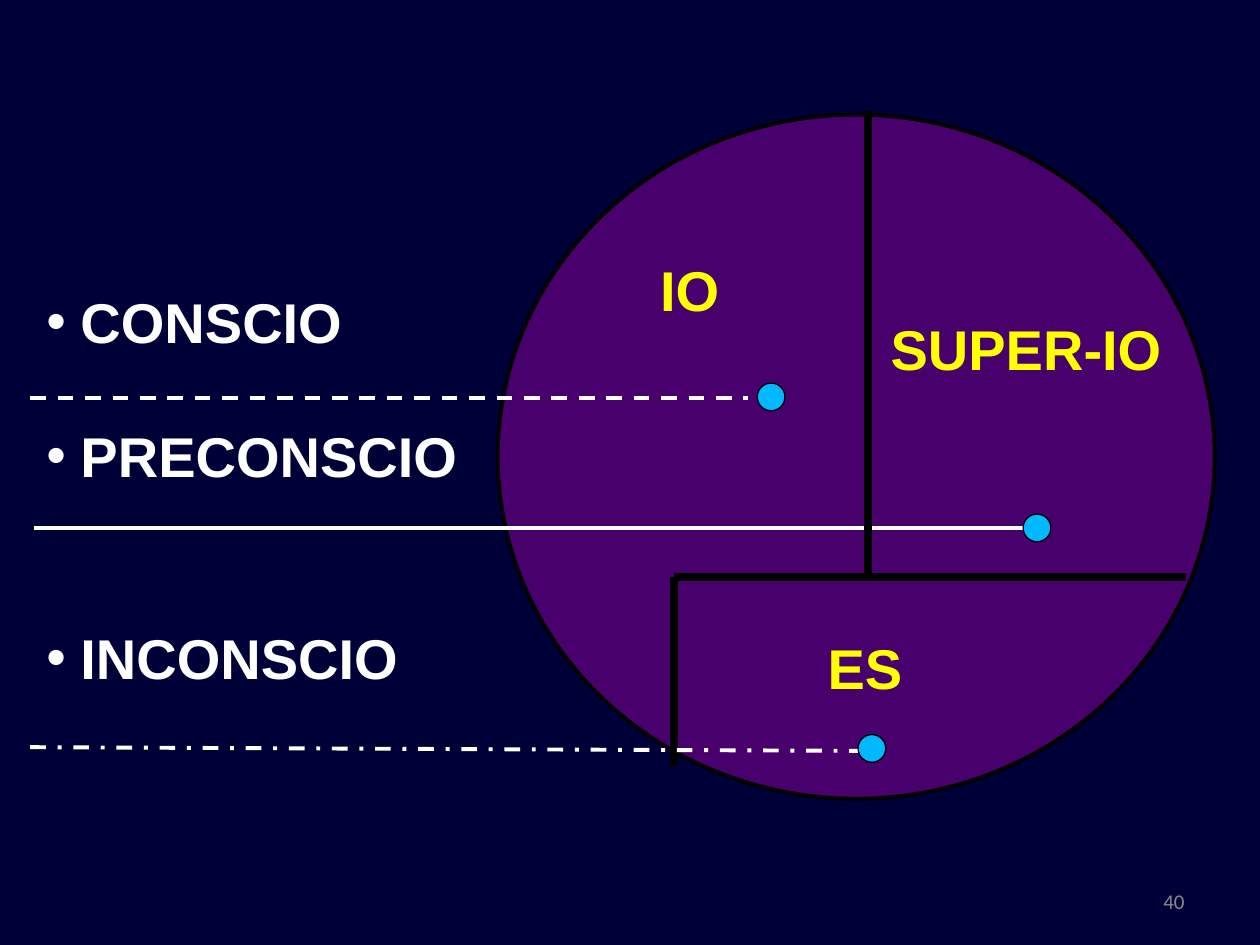
import dataclasses

import pptx
import pptx.dml.color
import pptx.enum.dml
import pptx.enum.shapes
import pptx.enum.text
import pptx.oxml.ns
import pptx.util
from lxml import etree

Inches = pptx.util.Inches
Pt = pptx.util.Pt
Shape = pptx.enum.shapes.MSO_SHAPE
Dash = pptx.enum.dml.MSO_LINE
Align = pptx.enum.text.PP_ALIGN
Anchor = pptx.enum.text.MSO_ANCHOR


@dataclasses.dataclass(frozen=True)
class Theme:
    background: str = "000039"
    level: str = "FFFFFF"
    label: str = "FFFF00"
    circle: str = "CC00CC"
    dot: str = "00B8FF"
    outline: str = "000000"
    number: str = "898989"
    font: str = "Arial"
    number_font: str = "Calibri"
    text_size: float = 32
    line_pitch: float = 38.4
    number_size: float = 12
    divider_width: float = 4.5
    pointer_width: float = 2.25
    dot_line_width: float = 0.75


def rgb(value):
    return pptx.dml.color.RGBColor.from_string(value)


def add_xml(parent, tag, **attributes):
    return etree.SubElement(parent, pptx.oxml.ns.qn(tag), **attributes)


class SlideBuilder:
    def __init__(self, slide, theme):
        self.slide = slide
        self.theme = theme
        fill = slide.background.fill
        fill.solid()
        fill.fore_color.rgb = rgb(theme.background)

    def text_box(self, left, top, width, height, wrap=True):
        shape = self.slide.shapes.add_textbox(
            Inches(left), Inches(top), Inches(width), Inches(height))
        shape.text_frame.word_wrap = wrap
        return shape.text_frame

    def style(self, paragraph, color):
        paragraph.line_spacing = Pt(self.theme.line_pitch)
        paragraph.font.name = self.theme.font
        paragraph.font.size = Pt(self.theme.text_size)
        paragraph.font.bold = True
        paragraph.font.color.rgb = rgb(color)

    def label(self, text, left, top, width, height, wrap=False):
        paragraph = self.text_box(left, top, width, height, wrap).paragraphs[0]
        paragraph.text = text
        self.style(paragraph, self.theme.label)

    def bullets(self, items, left, top, width, height):
        """Each item is a text and the number of line heights before it."""
        frame = self.text_box(left, top, width, height)
        for index, (text, gap) in enumerate(items):
            paragraph = frame.add_paragraph() if index else frame.paragraphs[0]
            paragraph.text = text
            properties = paragraph._p.get_or_add_pPr()
            properties.set("marL", str(Inches(0.27)))
            properties.set("indent", str(-Inches(0.27)))
            add_xml(properties, "a:buFont", typeface=self.theme.font)
            add_xml(properties, "a:buChar", char="•")
            self.style(paragraph, self.theme.level)
            if gap:
                paragraph.space_before = Pt(gap * self.theme.line_pitch)

    def oval(self, kind, left, top, width, height, color, line_width, alpha=None):
        shape = self.slide.shapes.add_shape(
            kind, Inches(left), Inches(top), Inches(width), Inches(height))
        shape.shadow.inherit = False
        shape.fill.solid()
        shape.fill.fore_color.rgb = rgb(color)
        shape.line.color.rgb = rgb(self.theme.outline)
        shape.line.width = Pt(line_width)
        if alpha is not None:
            color_node = shape._element.spPr.find(
                ".//" + pptx.oxml.ns.qn("a:srgbClr"))
            add_xml(color_node, "a:alpha", val=str(alpha * 1000))

    def dot(self, left, top):
        self.oval(Shape.FLOWCHART_CONNECTOR, left, top, 0.22, 0.22,
                  self.theme.dot, self.theme.dot_line_width)

    def line(self, start, end, color, width, dash=None):
        connector = self.slide.shapes.add_connector(
            pptx.enum.shapes.MSO_CONNECTOR.STRAIGHT,
            *(Inches(value) for value in start + end))
        connector.line.color.rgb = rgb(color)
        connector.line.width = Pt(width)
        if dash is not None:
            connector.line.dash_style = dash
        add_xml(connector._element.spPr, "a:effectLst")

    def pointer(self, start, end, dash=None):
        self.line(start, end, self.theme.level, self.theme.pointer_width, dash)

    def divider(self, start, end):
        self.line(start, end, self.theme.outline, self.theme.divider_width)

    def slide_number(self, text, left, top, width, height):
        frame = self.text_box(left, top, width, height)
        frame.vertical_anchor = Anchor.MIDDLE
        paragraph = frame.paragraphs[0]
        paragraph.text = text
        paragraph.alignment = Align.RIGHT
        paragraph.font.name = self.theme.number_font
        paragraph.font.size = Pt(self.theme.number_size)
        paragraph.font.color.rgb = rgb(self.theme.number)


def main():
    presentation = pptx.Presentation()
    presentation.slide_width = Inches(10)
    presentation.slide_height = Inches(7.5)
    theme = Theme()
    builder = SlideBuilder(
        presentation.slides.add_slide(presentation.slide_layouts[6]), theme)

    # Levels of consciousness
    builder.bullets([("CONSCIO", 0), ("PRECONSCIO", 1), ("INCONSCIO", 2)],
                    0.27, 2.23, 3.62, 3.3)

    # Psyche circle
    builder.oval(Shape.OVAL, 3.95, 0.91, 5.69, 5.43,
                 theme.circle, theme.pointer_width, alpha=35)

    # Pointers of the two upper levels
    builder.pointer((0.24, 3.16), (5.94, 3.16), Dash.DASH)
    builder.pointer((0.27, 4.19), (8.23, 4.19))

    # Dividers between the three instances
    floor = 4.58
    for start, end in [((6.89, 0.88), (6.89, floor)),
                       ((6.26, floor), (9.41, floor)),
                       ((5.35, floor), (5.35, 6.08)),
                       ((5.35, floor), (6.26, floor))]:
        builder.divider(start, end)

    # Instance names
    builder.label("IO", 5.14, 1.98, 0.67, 0.63)
    builder.label("ES", 6.47, 4.98, 0.8, 0.63)
    builder.label("SUPER-IO", 6.97, 2.45, 2.36, 1.17, wrap=True)

    # Pointer ends, with the lowest pointer under its dot
    builder.dot(6.01, 3.04)
    builder.dot(8.12, 4.08)
    builder.pointer((0.24, 5.93), (6.94, 5.96), Dash.DASH_DOT)
    builder.dot(6.81, 5.83)

    builder.slide_number("40", 7.17, 6.95, 2.33, 0.4)
    presentation.save("out.pptx")


if __name__ == "__main__":
    main()
